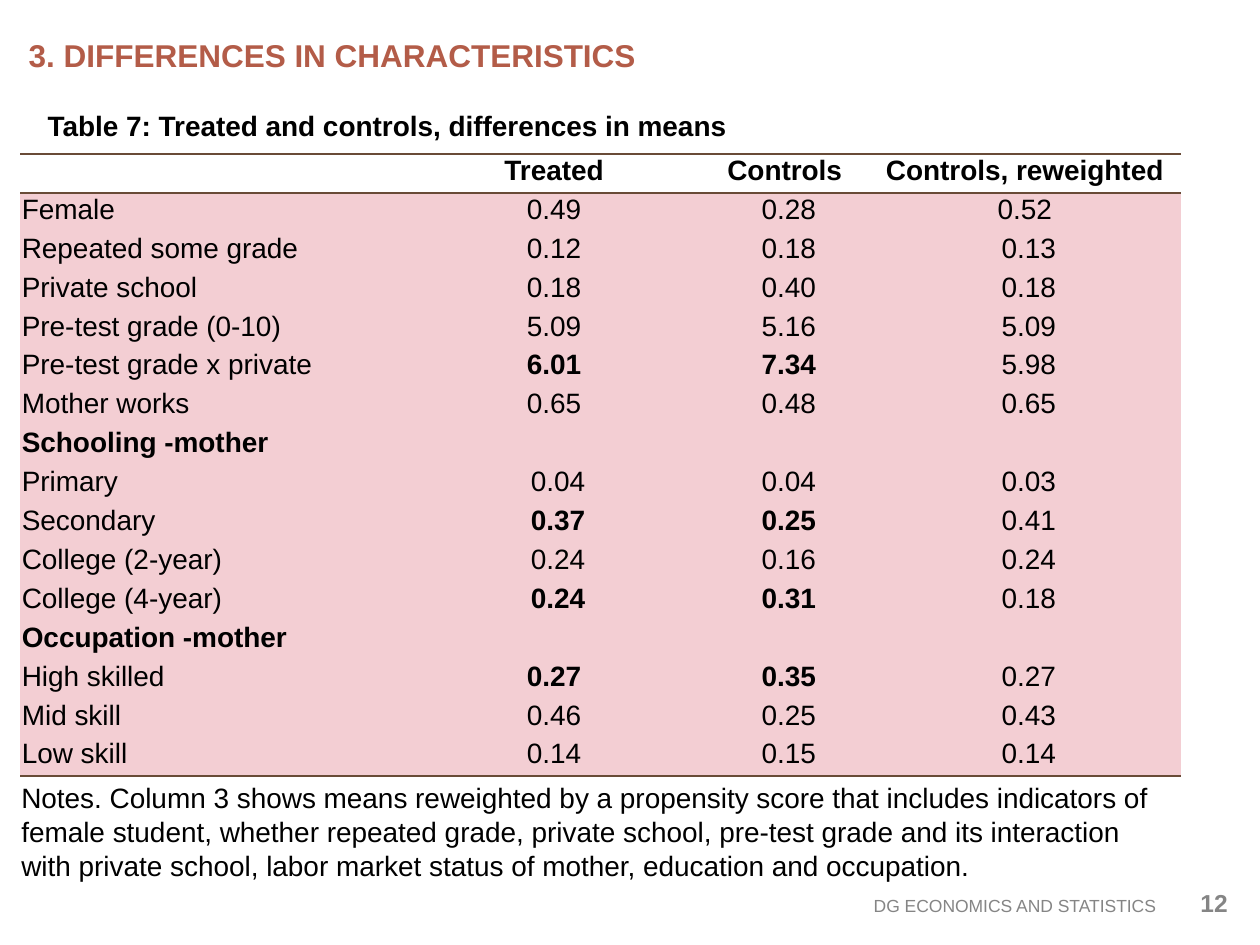
from typing import NamedTuple

from lxml.etree import SubElement
from pptx import Presentation
from pptx.dml.color import RGBColor
from pptx.enum.text import MSO_ANCHOR, PP_ALIGN
from pptx.oxml.ns import qn
from pptx.util import Cm, Pt

COLORS = {
    "heading": "B35C48",
    "muted": "858585",
    "ink": "000000",
    "rule": "694B37",
    "header": "FFFFFF",
    "body": "F3CED3",
}
FONT = "Arial"
COLUMN_WIDTHS = (7.8, 5.92, 3.38, 6.3)
INSET = 0.03
NUDGE = 0.16


class Box(NamedTuple):
    left: float
    top: float
    width: float
    height: float


class Characteristic(NamedTuple):
    label: str
    means: tuple = ("", "", "")
    bold: bool = False
    nudged: tuple = (False, True, True)


HEADER = Characteristic("", ("Treated", "Controls", "Controls, reweighted"), True, (False,) * 3)
SHIFTED = (True, True, True)
CHARACTERISTICS = (
    Characteristic("Female", ("0.49", "0.28", "0.52"), nudged=(False, True, False)),
    Characteristic("Repeated some grade", ("0.12", "0.18", "0.13")),
    Characteristic("Private school", ("0.18", "0.40", "0.18")),
    Characteristic("Pre-test grade (0-10)", ("5.09", "5.16", "5.09")),
    Characteristic("Pre-test grade x private", ("6.01", "7.34", "5.98"), True),
    Characteristic("Mother works", ("0.65", "0.48", "0.65")),
    Characteristic("Schooling -mother"),
    Characteristic("Primary", ("0.04", "0.04", "0.03"), nudged=SHIFTED),
    Characteristic("Secondary", ("0.37", "0.25", "0.41"), True, SHIFTED),
    Characteristic("College (2-year)", ("0.24", "0.16", "0.24"), nudged=SHIFTED),
    Characteristic("College (4-year)", ("0.24", "0.31", "0.18"), True, SHIFTED),
    Characteristic("Occupation -mother"),
    Characteristic("High skilled", ("0.27", "0.35", "0.27"), True),
    Characteristic("Mid skill", ("0.46", "0.25", "0.43")),
    Characteristic("Low skill", ("0.14", "0.15", "0.14")),
)


def write(frame, text: str, *, size: float = 16, color: str = "ink",
          bold: bool = False, align=PP_ALIGN.LEFT) -> None:
    """Write one formatted paragraph into a text frame."""
    paragraph = frame.paragraphs[0]
    paragraph.alignment = align
    run = paragraph.add_run()
    run.text = text
    run.font.name = FONT
    run.font.size = Pt(size)
    run.font.bold = bold
    run.font.color.rgb = RGBColor.from_string(COLORS[color])


def add_label(slide, box: Box, text: str, *, anchor=MSO_ANCHOR.TOP,
              right_inset: float = 0.25, **text_format) -> None:
    """Add a wrapping text box holding one paragraph."""
    frame = slide.shapes.add_textbox(*map(Cm, box)).text_frame
    frame.word_wrap = True
    frame.vertical_anchor = anchor
    frame.margin_right = Cm(right_inset)
    write(frame, text, **text_format)


def set_borders(cell, *, top: bool, bottom: bool) -> None:
    """Rule the chosen horizontal edges of a cell and clear the others."""
    properties = cell._tc.get_or_add_tcPr()
    edges = (("L", False), ("R", False), ("T", top), ("B", bottom))
    for position, (edge, ruled) in enumerate(edges):
        line = SubElement(properties, qn(f"a:ln{edge}"), w=str(Pt(1)))
        if ruled:
            fill = SubElement(line, qn("a:solidFill"))
            SubElement(fill, qn("a:srgbClr"), val=COLORS["rule"])
        else:
            SubElement(line, qn("a:noFill"))
        properties.insert(position, line)


def add_means_table(slide, box: Box) -> None:
    """Add the table of means by group."""
    rows = (HEADER, *CHARACTERISTICS)
    table = slide.shapes.add_table(len(rows), len(COLUMN_WIDTHS), *map(Cm, box)).table
    table.first_row = table.horz_banding = False
    for column, width in zip(table.columns, COLUMN_WIDTHS):
        column.width = Cm(width)
    last = len(rows) - 1
    for index, row in enumerate(rows):
        is_section = not any(row.means)
        for position, text in enumerate((row.label, *row.means)):
            cell = table.cell(index, position)
            nudged = position > 0 and row.nudged[position - 1]
            cell.margin_left = Cm(INSET + NUDGE * nudged)
            cell.margin_right = cell.margin_top = Cm(INSET)
            cell.margin_bottom = 0
            cell.fill.solid()
            cell.fill.fore_color.rgb = RGBColor.from_string(
                COLORS["body" if index else "header"])
            set_borders(cell, top=index < 2, bottom=index in (0, last))
            if text:
                is_bold = is_section or index == 0 or (row.bold and position in (1, 2))
                write(cell.text_frame, text, bold=is_bold,
                      align=PP_ALIGN.CENTER if position else PP_ALIGN.LEFT)


def main() -> None:
    """Build the slide and save it."""
    deck = Presentation()
    deck.slide_width, deck.slide_height = Cm(25.4), Cm(19.05)
    slide = deck.slides.add_slide(deck.slide_layouts[6])
    add_label(slide, Box(7.98, 17.91, 15.32, 0.69), "DG ECONOMICS AND STATISTICS",
              size=10, color="muted", align=PP_ALIGN.RIGHT,
              anchor=MSO_ANCHOR.MIDDLE, right_inset=0)
    add_label(slide, Box(0.33, 0.05, 17.27, 2.13), "3. DIFFERENCES IN CHARACTERISTICS",
              size=18, color="heading", bold=True, anchor=MSO_ANCHOR.MIDDLE)
    add_label(slide, Box(23.55, 17.78, 1.45, 0.89), "12",
              size=14, color="muted", bold=True, align=PP_ALIGN.RIGHT)
    add_means_table(slide, Box(0.41, 3.1, sum(COLUMN_WIDTHS), 12.52))
    add_label(slide, Box(0.71, 2.06, 17.91, 0.94),
              "Table 7: Treated and controls, differences in means", bold=True)
    add_label(slide, Box(0.18, 15.62, 23.62, 2.31),
              "Notes. Column 3 shows means reweighted by a propensity score that includes "
              "indicators of female student, whether repeated grade, private school, pre-test "
              "grade and its interaction with private school, labor market status of mother, "
              "education and occupation.")
    deck.save("out.pptx")


if __name__ == "__main__":
    main()
